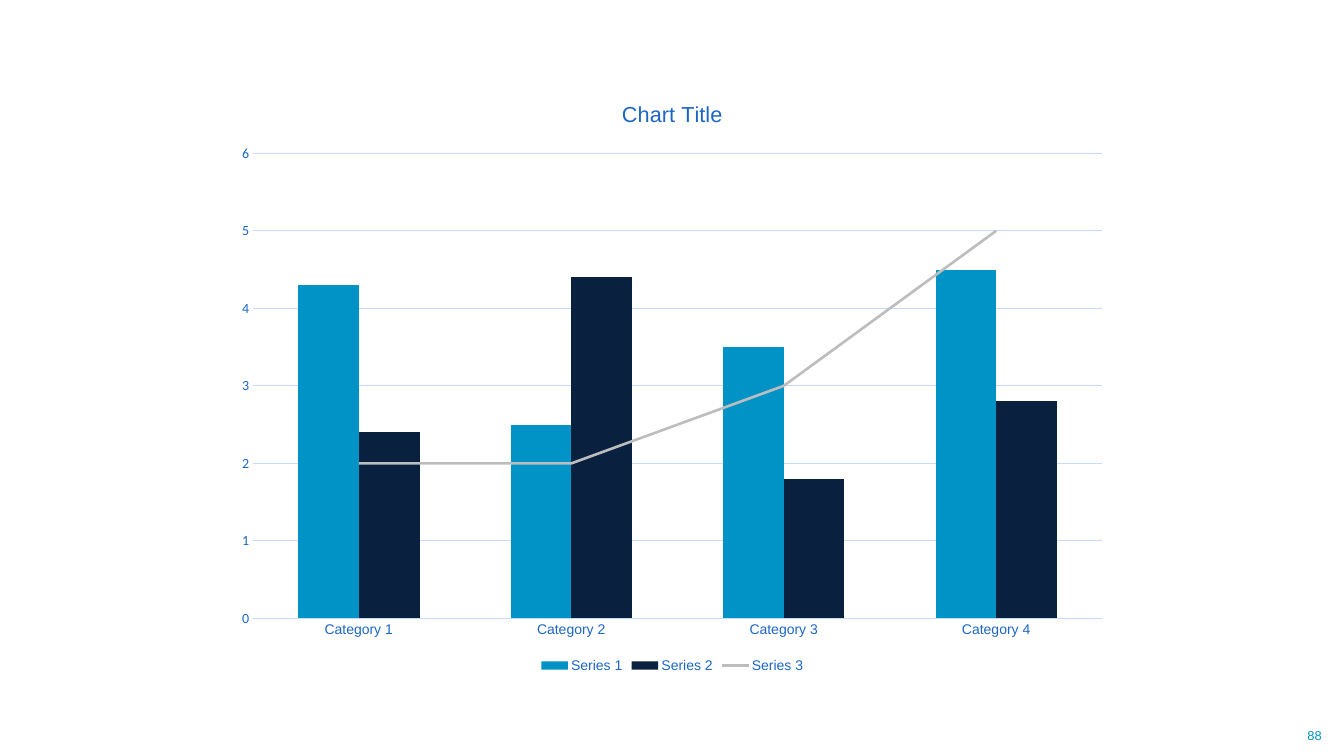
import copy
from dataclasses import dataclass

import pptx
import pptx.chart.data
import pptx.dml.color
import pptx.enum.chart
import pptx.enum.text
import pptx.oxml
import pptx.oxml.ns
import pptx.util
from pptx.util import Cm, Pt


@dataclass(frozen=True)
class Theme:
    sky: str = "0192C6"
    navy: str = "09213F"
    gray: str = "BBBDBF"
    blue: str = "1C67C5"
    pale: str = "C6DBF7"
    page: str = "0193C7"
    sans: str = "Arial"
    digit: str = "Calibri"
    base: float = 10
    small: float = 11
    label: float = 12
    title: float = 18.6


THEME = Theme()
CATS = [f"Category {n}" for n in range(1, 5)]
DATA = {
    "Series 1": (4.3, 2.5, 3.5, 4.5),
    "Series 2": (2.4, 4.4, 1.8, 2.8),
    "Series 3": (2, 2, 3, 5),
}


def rgb(code):
    return pptx.dml.color.RGBColor.from_string(code)


def style(font, size, color, name):
    font.size = Pt(size)
    font.bold = False
    font.color.rgb = rgb(color)
    font.name = name


def stroke(line, color, width):
    line.color.rgb = rgb(color)
    line.width = Pt(width)


def add_text(slide, text, box, size, color):
    frame = slide.shapes.add_textbox(*map(Cm, box)).text_frame
    frame.word_wrap = True
    frame.vertical_anchor = pptx.enum.text.MSO_ANCHOR.MIDDLE
    para = frame.paragraphs[0]
    para.alignment = pptx.enum.text.PP_ALIGN.CENTER
    run = para.add_run()
    run.text = text
    style(run.font, size, color, THEME.sans)


def last_to_line(chart):
    """Move the last bar series to a line plot on the same axes."""
    qn = pptx.oxml.ns.qn
    bars = chart.plots[0]._element
    row = bars.findall(qn("c:ser"))[-1]
    for flag in row.findall(qn("c:invertIfNegative")):
        row.remove(flag)
    plot = pptx.oxml.parse_xml(
        f'<c:lineChart {pptx.oxml.ns.nsdecls("c")}>'
        '<c:grouping val="standard"/><c:varyColors val="0"/>'
        '<c:marker val="1"/></c:lineChart>'
    )
    plot.insert(2, row)
    for axis in bars.findall(qn("c:axId")):
        plot.append(copy.deepcopy(axis))
    bars.addnext(plot)


def set_axis(axis, name):
    axis.major_tick_mark = pptx.enum.chart.XL_TICK_MARK.NONE
    axis.minor_tick_mark = pptx.enum.chart.XL_TICK_MARK.NONE
    style(axis.tick_labels.font, THEME.label, THEME.blue, name)


def add_combo(slide, box):
    data = pptx.chart.data.CategoryChartData()
    data.categories = CATS
    for name, vals in DATA.items():
        data.add_series(name, vals)
    kind = pptx.enum.chart.XL_CHART_TYPE.COLUMN_CLUSTERED
    chart = slide.shapes.add_chart(kind, *map(Cm, box), data).chart
    style(chart.font, THEME.base, THEME.navy, THEME.digit)

    # Title and legend
    chart.has_title = True
    run = chart.chart_title.text_frame.paragraphs[0].add_run()
    run.text = "Chart Title"
    style(run.font, THEME.title, THEME.blue, THEME.sans)
    chart.has_legend = True
    chart.legend.position = pptx.enum.chart.XL_LEGEND_POSITION.BOTTOM
    chart.legend.include_in_layout = False
    style(chart.legend.font, THEME.label, THEME.blue, THEME.sans)

    # Axes
    cat, val = chart.category_axis, chart.value_axis
    set_axis(cat, THEME.sans)
    set_axis(val, THEME.digit)
    stroke(cat.format.line, THEME.pale, 0.75)
    val.format.line.fill.background()
    val.has_major_gridlines = True
    stroke(val.major_gridlines.format.line, THEME.pale, 0.75)
    val.minimum_scale, val.maximum_scale, val.major_unit = 0, 6, 1

    # Columns and line
    last_to_line(chart)
    bars, trend = chart.plots
    bars.gap_width, bars.overlap = 150, 0
    bars.vary_by_categories = False
    for row, color in zip(bars.series, (THEME.sky, THEME.navy)):
        row.format.fill.solid()
        row.format.fill.fore_color.rgb = rgb(color)
    row = trend.series[0]
    row.smooth = False
    row.marker.style = pptx.enum.chart.XL_MARKER_STYLE.NONE
    stroke(row.format.line, THEME.gray, 2.25)


def main():
    deck = pptx.Presentation()
    deck.slide_width, deck.slide_height = Cm(40.64), Cm(22.86)
    slide = deck.slides.add_slide(deck.slide_layouts[6])
    # Page number
    add_text(slide, "88", (38.86, 21.64, 1.78, 1.22), THEME.small, THEME.page)
    # Chart
    add_combo(slide, (6.78, 2.39, 27.1, 18.06))
    deck.save("out.pptx")


if __name__ == "__main__":
    main()
